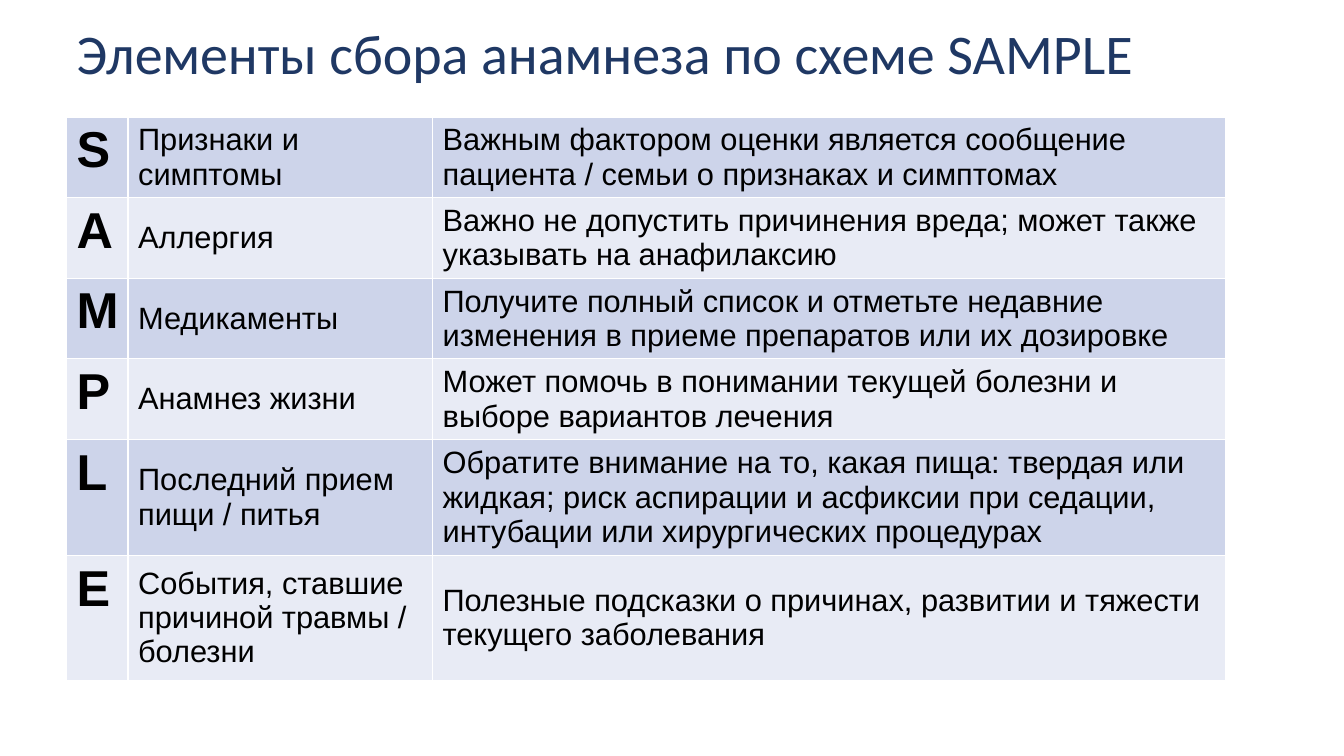
"""Build the slide on the SAMPLE scheme of history taking."""
from pptx import Presentation, util as u
from pptx.dml.color import RGBColor
from pptx.enum import text
from pptx.oxml import parse_xml
from pptx.oxml.ns import nsdecls

WIDTH, HEIGHT = 13.33, 7.5
LEFT, SPAN = 4.95, 86.27
COLUMNS = (4.58, 22.66, 59.04)
ROWS = (10.67, 10.67, 10.67, 10.67, 15.33, 16.53)
BANDS = ("CDD4EA", "E8EBF5")
SAMPLE = (
    ("S", "Признаки и симптомы",
     "Важным фактором оценки является сообщение пациента / семьи о признаках и симптомах"),
    ("A", "Аллергия",
     "Важно не допустить причинения вреда; может также указывать на анафилаксию"),
    ("M", "Медикаменты",
     "Получите полный список и отметьте недавние изменения в приеме препаратов или их дозировке"),
    ("P", "Анамнез жизни",
     "Может помочь в понимании текущей болезни и выборе вариантов лечения"),
    ("L", "Последний прием пищи / питья",
     "Обратите внимание на то, какая пища: твердая или жидкая; риск аспирации и асфиксии "
     "при седации, интубации или хирургических процедурах"),
    ("E", "События, ставшие причиной травмы / болезни",
     "Полезные подсказки о причинах, развитии и тяжести текущего заболевания"),
)


def across(percent):
    return u.Inches(WIDTH * percent / 100)


def down(percent):
    return u.Inches(HEIGHT * percent / 100)


def color(value):
    return RGBColor.from_string(value)


def write(tf, words, size=22, font="Arial", fill="000000", bold=False, spacing=None):
    p = tf.paragraphs[0]
    p.alignment = text.PP_ALIGN.LEFT
    p.line_spacing = spacing
    r = p.add_run()
    r.text = words
    r.font.size, r.font.name, r.font.bold = u.Pt(size), font, bold
    r.font.color.rgb = color(fill)


def add_title(s, words):
    sp = s.shapes.title
    sp.left, sp.top, sp.width, sp.height = across(LEFT), down(0.8), across(SPAN), down(13.33)
    tf = sp.text_frame
    tf.word_wrap = True
    tf.auto_size = text.MSO_AUTO_SIZE.NONE
    tf.vertical_anchor = text.MSO_ANCHOR.MIDDLE
    write(tf, words, size=40, font="Calibri", fill="1F3864", spacing=0.9)


def add_borders(cell, line="FFFFFF"):
    tc_pr = cell._tc.get_or_add_tcPr()
    for side in "LRTB":
        tc_pr.append(parse_xml(
            f'<a:ln{side} {nsdecls("a")} w="{u.Pt(1)}"><a:solidFill>'
            f'<a:srgbClr val="{line}"/></a:solidFill></a:ln{side}>'))


def fill_cell(cell, words, band, is_letter):
    add_borders(cell)
    cell.fill.solid()
    cell.fill.fore_color.rgb = color(band)
    cell.vertical_anchor = text.MSO_ANCHOR.TOP if is_letter else text.MSO_ANCHOR.MIDDLE
    write(cell.text_frame, words, size=36 if is_letter else 22, bold=is_letter)


def add_sample_table(s):
    table = s.shapes.add_table(len(ROWS), len(COLUMNS), across(LEFT), down(15.47),
                               across(SPAN), down(sum(ROWS))).table
    table.first_row = table.horz_banding = False
    for column, share in zip(table.columns, COLUMNS):
        column.width = across(share)
    for i, (row, share) in enumerate(zip(table.rows, ROWS)):
        row.height = down(share)
        for j, words in enumerate(SAMPLE[i]):
            fill_cell(table.cell(i, j), words, BANDS[i % 2], j == 0)


def main():
    prs = Presentation()
    prs.slide_width, prs.slide_height = u.Inches(WIDTH), u.Inches(HEIGHT)
    s = prs.slides.add_slide(prs.slide_layouts[5])
    add_title(s, "Элементы сбора анамнеза по схеме SAMPLE")
    add_sample_table(s)
    prs.save("out.pptx")


if __name__ == "__main__":
    main()
